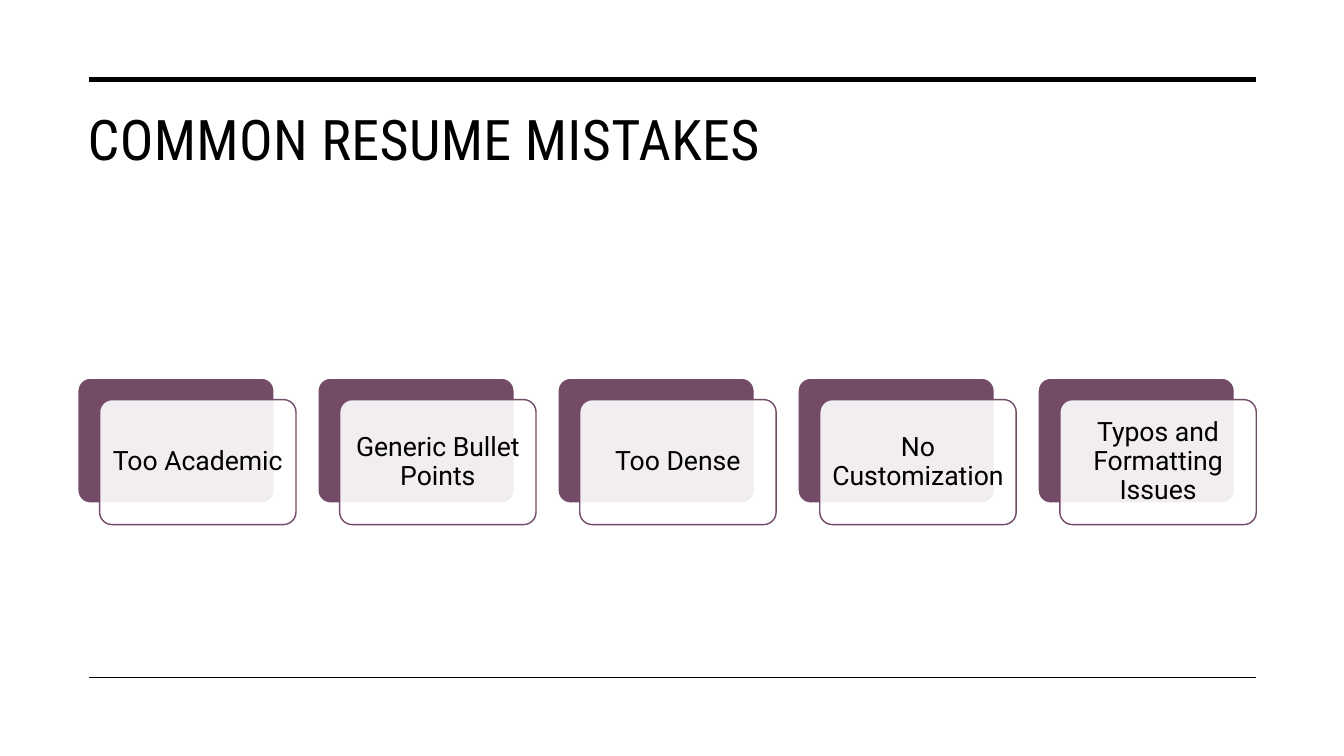
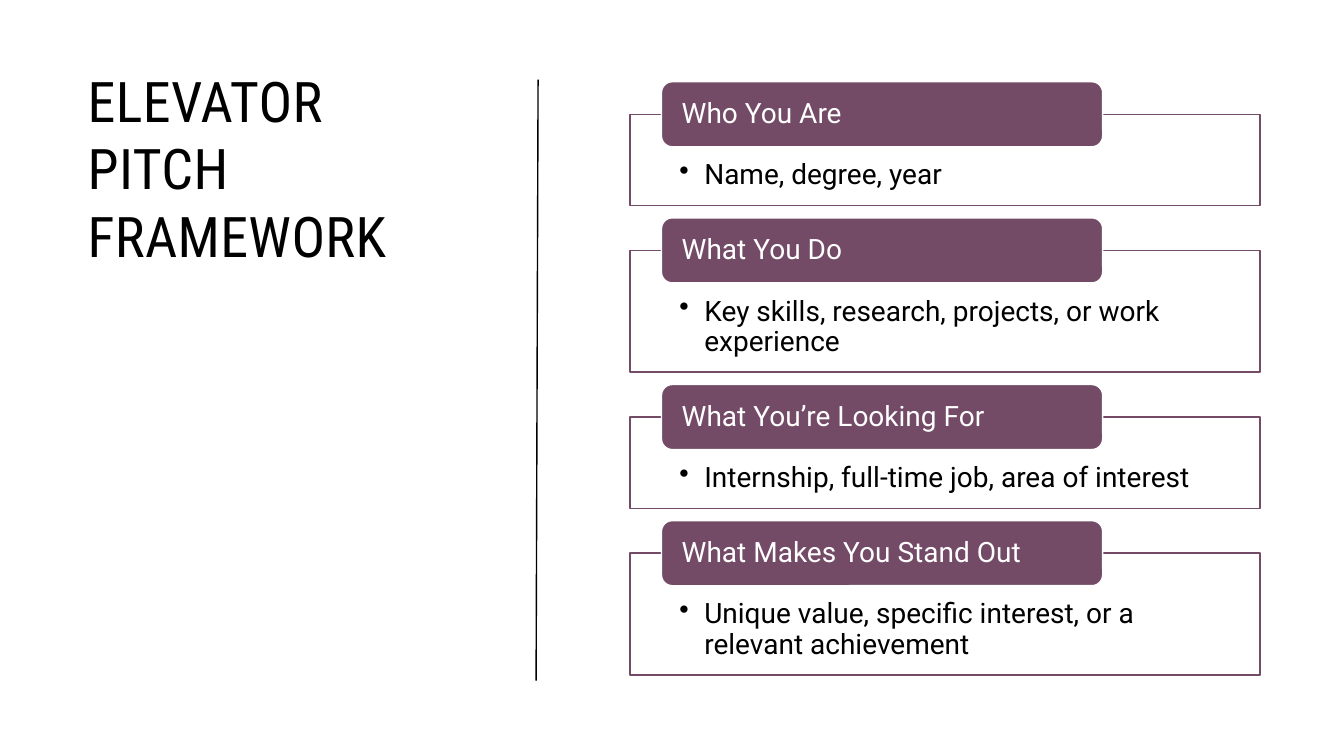
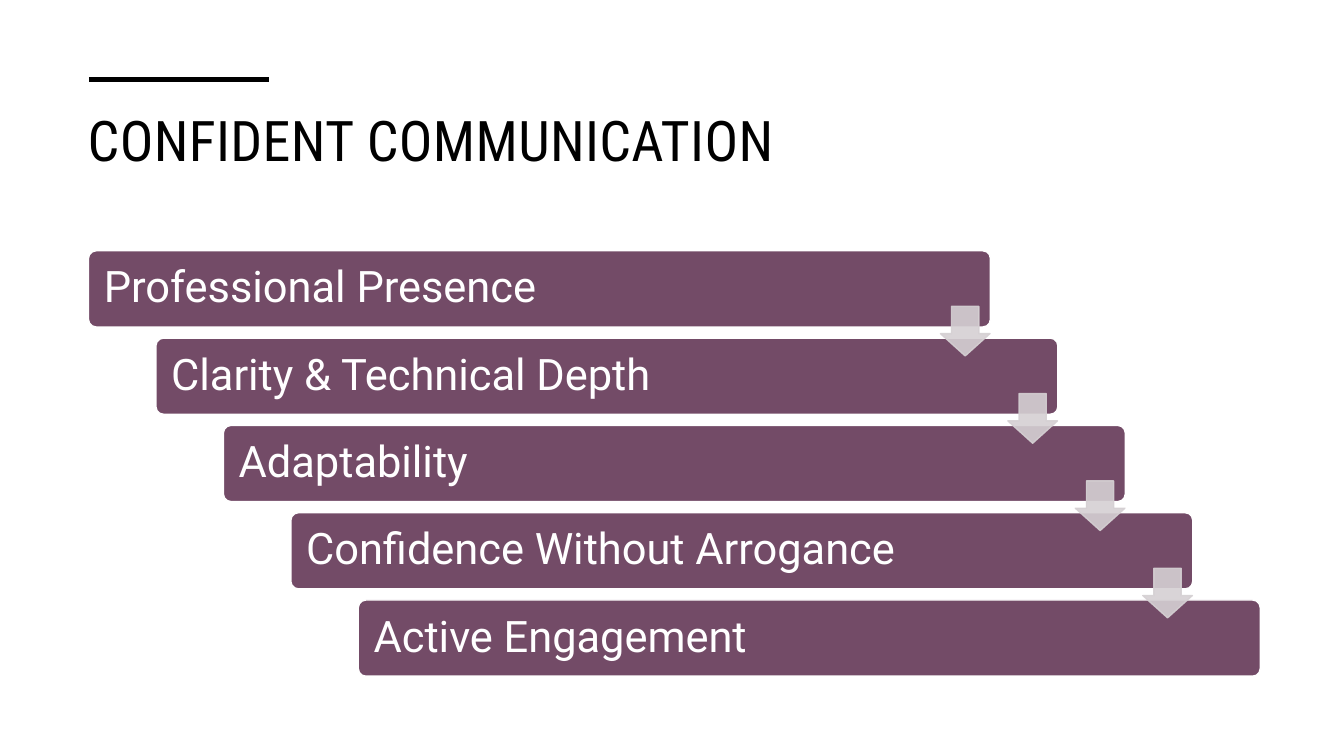
from lxml.etree import SubElement
from pptx import Presentation
from pptx.dml.color import RGBColor
from pptx.enum.shapes import MSO_CONNECTOR, MSO_SHAPE
from pptx.enum.text import MSO_ANCHOR, MSO_AUTO_SIZE, PP_ALIGN
from pptx.oxml.ns import qn
from pptx.util import Cm, Pt

PLUM, WHITE, BLACK, GREY = "734B67", "FFFFFF", "000000", "D5D0D3"
HEAD_FONT, BODY_FONT = "Roboto Condensed", "Roboto"
LEFT, RIGHT, RULE_TOP = 2.24, 31.65, 2.01


def rgb(value):
    """Turn a hex string into a colour."""
    return RGBColor.from_string(value)


def fade(part, percent=90):
    """Set the opacity of every colour inside an XML part."""
    for colour in part.iter(qn("a:srgbClr")):
        SubElement(colour, qn("a:alpha")).set("val", str(percent * 1000))


def write(tf, text, size=20, color=BLACK, font=BODY_FONT, align=PP_ALIGN.LEFT,
          anchor=MSO_ANCHOR.MIDDLE, insets=(0.25, 0.13, 0.25, 0.13),
          spacing=0.9, tracking=None, bullet=False):
    """Fill a text frame with one formatted paragraph."""
    tf.word_wrap = True
    tf.auto_size = MSO_AUTO_SIZE.NONE
    tf.vertical_anchor = anchor
    tf.margin_left, tf.margin_top, tf.margin_right, tf.margin_bottom = map(Cm, insets)
    p = tf.paragraphs[0]
    p.alignment, p.line_spacing = align, spacing
    r = p.add_run()
    r.text = text
    r.font.size, r.font.name, r.font.color.rgb = Pt(size), font, rgb(color)
    if tracking:
        r.font._element.set("spc", str(tracking))
    if bullet:
        pPr = p._p.get_or_add_pPr()
        pPr.set("marL", str(Cm(0.63)))
        pPr.set("indent", str(Cm(-0.63)))
        SubElement(pPr, qn("a:buChar")).set("char", "•")


def add_box(s, kind, x, y, w, h, fill=PLUM, line=WHITE, adj=()):
    """Add a filled and outlined preset shape."""
    box = s.shapes.add_shape(kind, Cm(x), Cm(y), Cm(w), Cm(h))
    box.shadow.inherit = False
    box.fill.solid()
    box.fill.fore_color.rgb = rgb(fill)
    box.line.color.rgb = rgb(line)
    box.line.width = Pt(1)
    for i, value in enumerate(adj):
        box.adjustments[i] = value
    return box


def add_rule(s, x1, y1, x2, y2, width=1):
    """Add a straight black line."""
    rule = s.shapes.add_connector(MSO_CONNECTOR.STRAIGHT, Cm(x1), Cm(y1), Cm(x2), Cm(y2))
    rule.line.color.rgb = rgb(BLACK)
    rule.line.width = Pt(width)
    SubElement(rule._element.spPr, qn("a:effectLst"))


def add_titled_slide(prs, title, x, y, w, h):
    """Add a slide and place its title."""
    s = prs.slides.add_slide(prs.slide_layouts[5])
    sp = s.shapes.title
    sp.left, sp.top, sp.width, sp.height = map(Cm, (x, y, w, h))
    write(sp.text_frame, title, size=40, font=HEAD_FONT, anchor=MSO_ANCHOR.TOP,
          spacing=1.0, tracking=30)
    return s


def add_card(s, x, y, text):
    """Add a translucent card over an offset plum backing."""
    w, h = 4.95, 3.15
    add_box(s, MSO_SHAPE.ROUNDED_RECTANGLE, x, y, w, h, adj=[0.1])
    card = add_box(s, MSO_SHAPE.ROUNDED_RECTANGLE, x + 0.55, y + 0.54, w, h,
                   fill=WHITE, line=PLUM, adj=[0.1])
    fade(card._element.spPr.find(qn("a:solidFill")))
    write(card.text_frame, text, size=19, align=PP_ALIGN.CENTER, insets=[0.2] * 4)


def add_section(s, y, h, heading, detail):
    """Add a bulleted frame with a heading tab on its top edge."""
    x = 15.88
    frame = add_box(s, MSO_SHAPE.RECTANGLE, x, y, 15.88, h, fill=WHITE, line=PLUM)
    fade(frame._element.spPr.find(qn("a:solidFill")))
    write(frame.text_frame, detail, anchor=MSO_ANCHOR.TOP,
          insets=(1.24, 1.17, 1.24, 0.41), bullet=True)
    tab = add_box(s, MSO_SHAPE.ROUNDED_RECTANGLE, x + 0.79, y - 0.82, 11.12, 1.64)
    write(tab.text_frame, heading, color=WHITE, insets=(0.43, 0, 0.43, 0))


def build_mistakes(prs):
    """Build the row of resume mistakes."""
    s = add_titled_slide(prs, "COMMON RESUME MISTAKES", 1.96, 2.51, 29.69, 3.2)
    add_rule(s, LEFT, RULE_TOP, RIGHT, RULE_TOP, width=3.5)
    add_rule(s, LEFT, 17.07, RIGHT, 17.07)
    mistakes = ["Too Academic", "Generic Bullet Points", "Too Dense",
                "No Customization", "Typos and Formatting Issues"]
    for i, mistake in enumerate(mistakes):
        add_card(s, 1.96 + i * 6.05, 9.53, mistake)


def build_pitch(prs):
    """Build the stacked pitch sections."""
    s = add_titled_slide(prs, "ELEVATOR PITCH FRAMEWORK", 1.96, 1.55, 10.06, 12.67)
    add_rule(s, 13.51, 17.15, 13.56, RULE_TOP)
    one_line, two_lines, gap = 2.3, 3.07, 1.13
    sections = [
        (one_line, "Who You Are", "Name, degree, year"),
        (two_lines, "What You Do", "Key skills, research, projects, or work experience"),
        (one_line, "What You’re Looking For",
         "Internship, full-time job, area of interest"),
        (two_lines, "What Makes You Stand Out",
         "Unique value, specific interest, or a relevant achievement"),
    ]
    y = 2.88
    for h, heading, detail in sections:
        add_section(s, y, h, heading, detail)
        y += h + gap


def build_communication(prs):
    """Build the descending steps and the arrows between them."""
    s = add_titled_slide(prs, "CONFIDENT COMMUNICATION", 1.96, 2.54, 30, 2.92)
    add_rule(s, LEFT, RULE_TOP, 6.78, RULE_TOP, width=3.5)
    steps = ["Professional Presence", "Clarity & Technical Depth", "Adaptability",
             "Confidence Without Arrogance", "Active Engagement"]
    dx, dy = 1.7, 2.2
    for i, step in enumerate(steps):
        bar = add_box(s, MSO_SHAPE.ROUNDED_RECTANGLE, 2.23 + i * dx, 6.32 + i * dy,
                      22.73, 1.92, adj=[0.1])
        write(bar.text_frame, step, size=31, color=WHITE, insets=[0.33] * 4)
    for i in range(len(steps) - 1):
        arrow = add_box(s, MSO_SHAPE.DOWN_ARROW, 23.7 + i * dx, 7.72 + i * dy,
                        1.25, 1.25, fill=GREY, line=GREY, adj=[0.55, 0.45])
        fade(arrow._element.spPr)


def main():
    """Build and save the presentation."""
    prs = Presentation()
    prs.slide_width, prs.slide_height = Cm(33.87), Cm(19.05)
    build_mistakes(prs)
    build_pitch(prs)
    build_communication(prs)
    prs.save("out.pptx")


if __name__ == "__main__":
    main()
